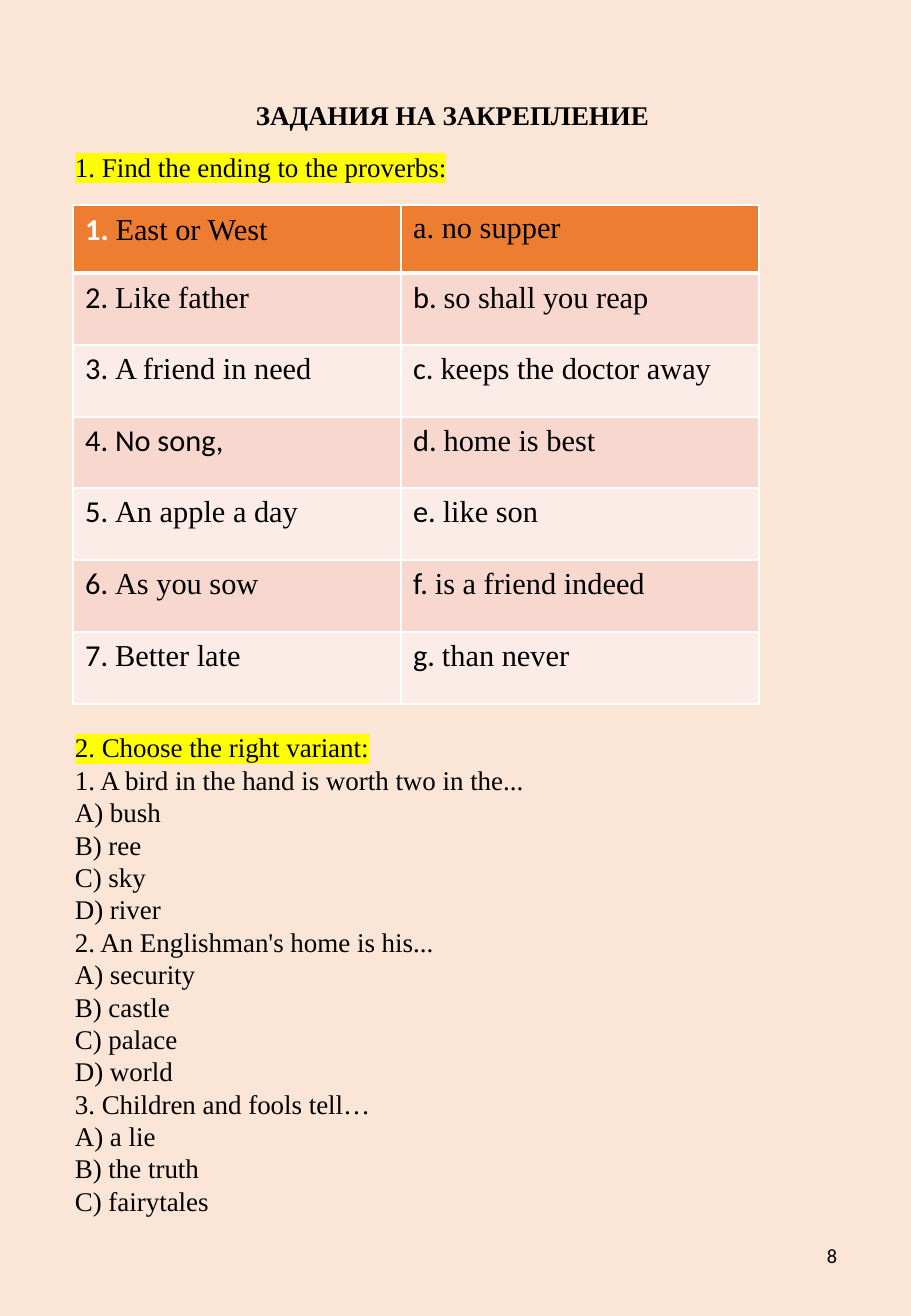
"""Build a worksheet page with a proverb matching table and a multiple-choice quiz."""
import pptx
import pptx.dml.color
import pptx.enum.text
import pptx.oxml
import pptx.oxml.ns
import pptx.util

PX = 7526
BLACK = pptx.dml.color.RGBColor(0x00, 0x00, 0x00)
WHITE = pptx.dml.color.RGBColor(0xFF, 0xFF, 0xFF)
YELLOW = pptx.dml.color.RGBColor(0xFF, 0xFF, 0x00)
PEACH = pptx.dml.color.RGBColor(0xFB, 0xE5, 0xD6)
ORANGE = pptx.dml.color.RGBColor(0xED, 0x7D, 0x31)
ROSE = pptx.dml.color.RGBColor(0xF8, 0xD7, 0xCE)
BLUSH = pptx.dml.color.RGBColor(0xFC, 0xEC, 0xE8)
SERIF, SANS = "Times New Roman", "Calibri"
NS = pptx.oxml.ns.nsdecls("a")


def write(paragraph, text, size=16, name=SERIF, bold=False, colour=BLACK, marked=False):
    run = paragraph.add_run()
    run.text = text
    run.font.color.rgb = colour
    if marked:
        run._r.get_or_add_rPr().append(pptx.oxml.parse_xml(
            f'<a:highlight {NS}><a:srgbClr val="{YELLOW}"/></a:highlight>'))
    for key, value in {"size": pptx.util.Pt(size), "name": name, "bold": bold}.items():
        setattr(run.font, key, value)


def text_frame(left, top, width, height):
    frame = slide.shapes.add_textbox(left * PX, top * PX, width * PX, height * PX).text_frame
    frame.word_wrap = True
    return frame


deck = pptx.Presentation()
deck.slide_width, deck.slide_height = 911 * PX, 1316 * PX
slide = deck.slides.add_slide(deck.slide_layouts[5])
slide.background.fill.solid()
slide.background.fill.fore_color.rgb = PEACH

heading = slide.shapes.title
for key, value in {"left": 63, "top": 40, "width": 786, "height": 153}.items():
    setattr(heading, key, value * PX)
for key, value in {
    "word_wrap": True,
    "auto_size": pptx.enum.text.MSO_AUTO_SIZE.NONE,
    "vertical_anchor": pptx.enum.text.MSO_ANCHOR.MIDDLE,
    "margin_right": 19 * PX,
}.items():
    setattr(heading.text_frame, key, value)
heading_line = heading.text_frame.paragraphs[0]
heading_line.alignment = pptx.enum.text.PP_ALIGN.CENTER
heading_line.line_spacing = 0.9
write(heading_line, "ЗАДАНИЯ НА ЗАКРЕПЛЕНИЕ", bold=True)

first_task = text_frame(63, 148, 786, 1038).paragraphs[0]
first_task.line_spacing = 0.9
first_task.space_before = pptx.util.Pt(7.5)
write(first_task, "1. Find the ending to the proverbs:", marked=True)

page_frame = text_frame(814, 1220, 35, 70)
page_frame.vertical_anchor = pptx.enum.text.MSO_ANCHOR.MIDDLE
page_frame.paragraphs[0].alignment = pptx.enum.text.PP_ALIGN.RIGHT
write(page_frame.paragraphs[0], "8", size=12, name=SANS)

PROVERBS = [
    ("East or West", "no supper"),
    ("Like father", "so shall you reap"),
    ("A friend in need", "keeps the doctor away"),
    ("No song,", "home is best"),
    ("An apple a day", "like son"),
    ("As you sow", "is a friend indeed"),
    ("Better late", "than never"),
]
ROW_HEIGHTS = [68, 72, 72, 71, 72, 72, 72]
matching = slide.shapes.add_table(
    len(PROVERBS), 2, 73 * PX, 205 * PX, 686 * PX, sum(ROW_HEIGHTS) * PX).table
for column, width in zip(matching.columns, (328, 358)):
    column.width = width * PX

for index, halves in enumerate(PROVERBS):
    matching.rows[index].height = ROW_HEIGHTS[index] * PX
    is_header = index == 0
    for side, half in enumerate(halves):
        cell = matching.cell(index, side)
        cell.fill.solid()
        cell.fill.fore_color.rgb = ORANGE if is_header else (BLUSH, ROSE)[index % 2]
        for place, edge in enumerate("LRTB"):
            thick = (is_header and edge == "B") or (index == 1 and edge == "T")
            cell._tc.get_or_add_tcPr().insert(place, pptx.oxml.parse_xml(
                f'<a:ln{edge} {NS} w="{38100 if thick else 12700}"><a:solidFill>'
                f'<a:srgbClr val="{WHITE}"/></a:solidFill></a:ln{edge}>'))
        label = f"{'abcdefg'[index] if side else index + 1}. "
        white_label = is_header and side == 0
        line = cell.text_frame.paragraphs[0]
        write(line, label, size=18, name=SERIF if is_header and side else SANS,
              bold=white_label, colour=WHITE if white_label else BLACK)
        write(line, half, size=18, name=SANS if half == "No song," else SERIF)

QUIZ = [
    ("A bird in the hand is worth two in the...", ["bush", "ree", "sky", "river"]),
    ("An Englishman's home is his...", ["security", "castle", "palace", "world"]),
    ("Children and fools tell…", ["a lie", "the truth", "fairytales"]),
]
quiz_frame = text_frame(63, 725, 751, 564)
write(quiz_frame.paragraphs[0], "2. Choose the right variant:", marked=True)
for number, (question, answers) in enumerate(QUIZ, 1):
    write(quiz_frame.add_paragraph(), f"{number}. {question}")
    for letter, answer in zip("ABCD", answers):
        write(quiz_frame.add_paragraph(), f"{letter}) {answer}")

deck.save("out.pptx")
